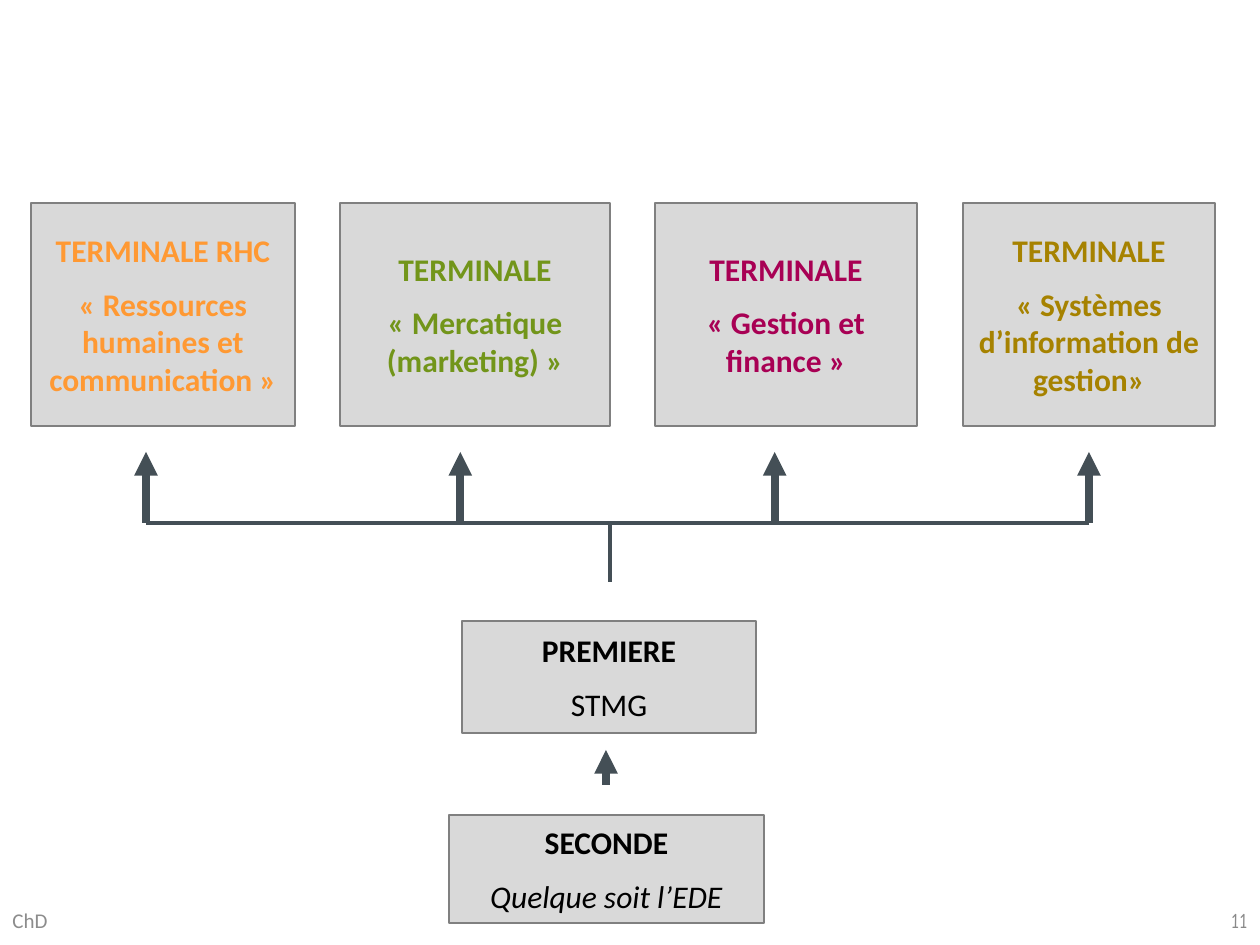
import pptx
import pptx.util
import pptx.dml.color
import pptx.enum.shapes
import pptx.enum.text
import pptx.oxml.ns
from dataclasses import dataclass
from lxml import etree

SCALE = 914400 / 126
ALIGN = pptx.enum.text.PP_ALIGN
NS = pptx.oxml.ns.nsdecls("a")


@dataclass(frozen=True)
class Theme:
    font: str = "Calibri"
    page_font: str = "Comic Neue"
    body: int = 18
    small: int = 12
    gap: int = 9
    edge: float = 0.75
    thin: float = 2.25
    thick: float = 4.5
    panel: str = "D9D9D9"
    border: str = "808080"
    arrow: str = "444F56"
    black: str = "000000"
    author: str = "8C8C8C"
    page: str = "898989"
    orange: str = "FF9933"
    green: str = "72951A"
    plum: str = "A80054"
    gold: str = "A68200"


THEME = Theme()

# left, width, colour, heading, subject
TRACKS = [
    (31, 264, THEME.orange, "TERMINALE RHC", "« Ressources humaines et communication »"),
    (340, 270, THEME.green, "TERMINALE", "« Mercatique (marketing) »"),
    (655, 262, THEME.plum, "TERMINALE", "« Gestion et finance »"),
    (963, 252, THEME.gold, "TERMINALE", "« Systèmes d’information de gestion»"),
]


def px(*sizes):
    return [pptx.util.Emu(round(size * SCALE)) for size in sizes]


def rgb(code):
    return pptx.dml.color.RGBColor.from_string(code)


def write(para, text, size, color, align, font=THEME.font, bold=False, italic=False):
    para.text = text
    para.alignment = align
    for run in para.runs:
        style = run.font
        style.name, style.size = font, pptx.util.Pt(size)
        style.bold, style.italic = bold, italic
        style.color.rgb = rgb(color)


def add_box(slide, place, color, head, sub, bold=False, italic=False):
    """Add a grey panel with a bold heading above a second paragraph."""
    kind = pptx.enum.shapes.MSO_SHAPE.RECTANGLE
    box = slide.shapes.add_shape(kind, *px(*place))
    box.shadow.inherit = False
    box.fill.solid()
    box.fill.fore_color.rgb = rgb(THEME.panel)
    box.line.color.rgb = rgb(THEME.border)
    box.line.width = pptx.util.Pt(THEME.edge)
    frame = box.text_frame
    frame.word_wrap = True
    frame.vertical_anchor = pptx.enum.text.MSO_ANCHOR.MIDDLE
    frame.text = head
    frame.add_paragraph()
    first, second = frame.paragraphs
    write(first, head, THEME.body, color, ALIGN.CENTER, bold=True)
    write(second, sub, THEME.body, color, ALIGN.CENTER, bold=bold, italic=italic)
    for para in frame.paragraphs:
        para.space_before = pptx.util.Pt(THEME.gap)


def add_line(slide, start, end, width, arrow=False):
    kind = pptx.enum.shapes.MSO_CONNECTOR.STRAIGHT
    line = slide.shapes.add_connector(kind, *px(*start, *end))
    line.line.color.rgb = rgb(THEME.arrow)
    line.line.width = pptx.util.Pt(width)
    if arrow:
        tip = etree.fromstring(f'<a:tailEnd {NS} type="triangle"/>')
        line.line._get_or_add_ln().append(tip)
    line._element.spPr.append(etree.fromstring(f"<a:effectLst {NS}/>"))


def add_note(slide, place, text, color, align, font=THEME.font):
    frame = slide.shapes.add_textbox(*px(*place)).text_frame
    frame.word_wrap = True
    frame.vertical_anchor = pptx.enum.text.MSO_ANCHOR.MIDDLE
    write(frame.paragraphs[0], text, THEME.small, color, align, font)


def add_fork(slide):
    """Join the stem from PREMIERE to one arrow per track."""
    top, bar, foot = 452, 523, 582
    stops = [146 + 314.33 * i for i in range(len(TRACKS))]
    for stop in stops:
        add_line(slide, (stop, bar), (stop, top), THEME.thick, arrow=True)
    add_line(slide, (stops[0], bar), (stops[-1], bar), THEME.thin)
    add_line(slide, (610, foot), (610, bar), THEME.thin)


def main():
    deck = pptx.Presentation()
    deck.slide_width, deck.slide_height = px(1260, 945)
    slide = deck.slides.add_slide(deck.slide_layouts[6])
    add_note(slide, (0, 895, 400, 50), "ChD", THEME.author, ALIGN.LEFT)
    add_note(slide, (966, 895, 294, 50), "11", THEME.page, ALIGN.RIGHT, THEME.page_font)
    for left, width, color, head, sub in TRACKS:
        add_box(slide, (left, 203, width, 223), color, head, sub, bold=True)
    add_box(slide, (462, 621, 294, 112), THEME.black, "PREMIERE", "STMG")
    add_box(slide, (449, 815, 315, 108), THEME.black, "SECONDE", "Quelque soit l’EDE", italic=True)
    add_line(slide, (606, 785), (606, 750), THEME.thick, arrow=True)
    add_fork(slide)
    deck.save("out.pptx")


if __name__ == "__main__":
    main()
